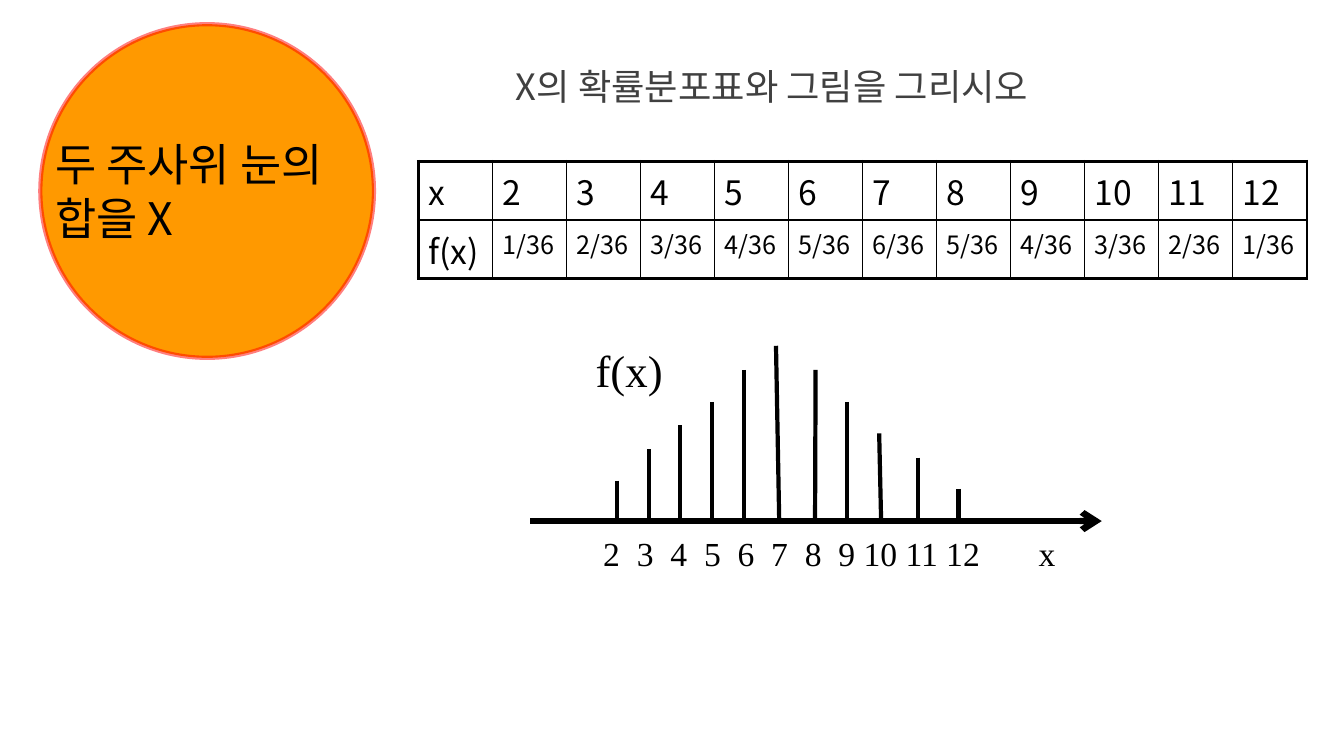
from dataclasses import dataclass

from pptx import Presentation
from pptx.dml.color import RGBColor
from pptx.enum.shapes import MSO_CONNECTOR, MSO_SHAPE
from pptx.oxml import parse_xml
from pptx.oxml.ns import nsdecls
from pptx.util import Pt


@dataclass(frozen=True)
class Theme:
    ink: RGBColor = RGBColor(0, 0, 0)
    prompt: RGBColor = RGBColor(0x40, 0x40, 0x40)
    circle: RGBColor = RGBColor(0xFF, 0x99, 0x00)
    rim: RGBColor = RGBColor(0xFF, 0, 0)
    sans: str = "Noto Sans CJK KR"
    serif: str = "Times New Roman"
    large: float = 32
    medium: float = 25.9
    normal: float = 24
    small: float = 18


theme = Theme()


def write(tf, text, size=theme.normal, font=theme.sans, color=theme.ink,
          spacing=None, before=None):
    """Fill a text frame, one paragraph per line of text."""
    for i, line in enumerate(text.split("\n")):
        p = tf.add_paragraph() if i else tf.paragraphs[0]
        p.line_spacing = spacing
        p.space_before = before
        r = p.add_run()
        r.text = line
        r.font.size = Pt(size)
        r.font.name = font
        r.font.color.rgb = color
        r.font._element.append(
            parse_xml(f'<a:ea {nsdecls("a")} typeface="{font}"/>'))


def draw_line(x1, y1, x2, y2, width):
    s = slide.shapes.add_connector(
        MSO_CONNECTOR.STRAIGHT, Pt(x1), Pt(y1), Pt(x2), Pt(y2))
    s.line.color.rgb = theme.ink
    s.line.width = Pt(width)
    s._element.spPr.append(parse_xml(f'<a:effectLst {nsdecls("a")}/>'))
    return s


prs = Presentation()
prs.slide_width, prs.slide_height = Pt(960), Pt(540)
slide = prs.slides.add_slide(prs.slide_layouts[6])

# Prompt
tf = slide.shapes.add_textbox(Pt(361.4), Pt(49), Pt(436), Pt(42.5)).text_frame
tf.word_wrap = True
tf.margin_left, tf.margin_right = Pt(7.2), 0
write(tf, "X의 확률분포표와 그림을 그리시오", size=theme.medium,
      color=theme.prompt, spacing=0.78)

# Probability table for the sum of two dice
sums = range(2, 13)
rows = [["x"] + [str(x) for x in sums],
        ["f(x)"] + [f"{6 - abs(x - 7)}/36" for x in sums]]
last_row, last_col = len(rows) - 1, len(rows[0]) - 1
table = slide.shapes.add_table(
    len(rows), len(rows[0]), Pt(298.8), Pt(115.2), Pt(635), Pt(84)).table
table.first_row = table.horz_banding = False
for col in table.columns:
    col.width = Pt(52.9)
for i, row in enumerate(rows):
    table.rows[i].height = Pt(42)
    for j, text in enumerate(row):
        cell = table.cell(i, j)
        cell.fill.background()
        write(cell.text_frame, text,
              size=theme.small if i and j else theme.normal)
        outer = {"lnL": j == 0, "lnR": j == last_col,
                 "lnT": i == 0, "lnB": i == last_row}
        for k, (side, thick) in enumerate(outer.items()):
            width = Pt(2.25 if thick else 1)
            cell._tc.get_or_add_tcPr().insert(k, parse_xml(
                f'<a:{side} {nsdecls("a")} w="{width}"><a:solidFill>'
                f'<a:srgbClr val="{theme.ink}"/></a:solidFill></a:{side}>'))

# Axis with arrowhead
base = 372.2
axis = draw_line(378.7, base, 787, base, 4.5)
axis.line._get_or_add_ln().append(
    parse_xml(f'<a:tailEnd {nsdecls("a")} type="arrow"/>'))

# Stems: top x, top y, foot x
stems = [(440.6, 343.4, 440.6), (463.5, 321, 463.5), (486, 303.8, 486),
         (508.8, 287, 508.8), (531.5, 264.2, 531.5), (554.3, 247, 556.6),
         (582.6, 264.2, 582.2), (605.3, 287, 605.3), (628, 309.6, 629.4),
         (656, 326.9, 656), (684.6, 349.2, 684.6)]
for top_x, top_y, foot_x in stems:
    draw_line(top_x, top_y, foot_x, base, 3)

# Axis labels on centred tab stops
tf = slide.shapes.add_textbox(Pt(418.3), Pt(377.3), Pt(363), Pt(36)).text_frame
tf.word_wrap = True
write(tf, "\t" + "\t".join([*rows[0][1:], "x"]), font=theme.serif, before=Pt(3))
stops = [11.5 + 24 * i for i in range(9)] + [233, 262.5, 322.5]
tabs = "".join(f'<a:tab pos="{Pt(x)}" algn="ctr"/>' for x in stops)
tf.paragraphs[0]._p.get_or_add_pPr().append(
    parse_xml(f'<a:tabLst {nsdecls("a")}>{tabs}</a:tabLst>'))

tf = slide.shapes.add_textbox(Pt(418.3), Pt(241.2), Pt(73.5), Pt(45.4)).text_frame
tf.word_wrap = True
write(tf, "f(x)", size=theme.large, font=theme.serif, before=Pt(4))

# Circle with its caption
s = slide.shapes.add_shape(MSO_SHAPE.OVAL, Pt(28.8), Pt(17.3), Pt(238.3), Pt(238.3))
s.shadow.inherit = False
s.fill.solid()
s.fill.fore_color.rgb = theme.circle
s.line.color.rgb = theme.rim
s.line.width = Pt(3)
rim = s.line._get_or_add_ln().find(".//{*}srgbClr")
rim.append(parse_xml(f'<a:alpha {nsdecls("a")} val="50000"/>'))

tf = slide.shapes.add_textbox(Pt(32.4), Pt(94.3), Pt(215.3), Pt(85)).text_frame
tf.word_wrap = False
write(tf, "두 주사위 눈의\n합을 X", size=theme.large)

prs.save("out.pptx")
